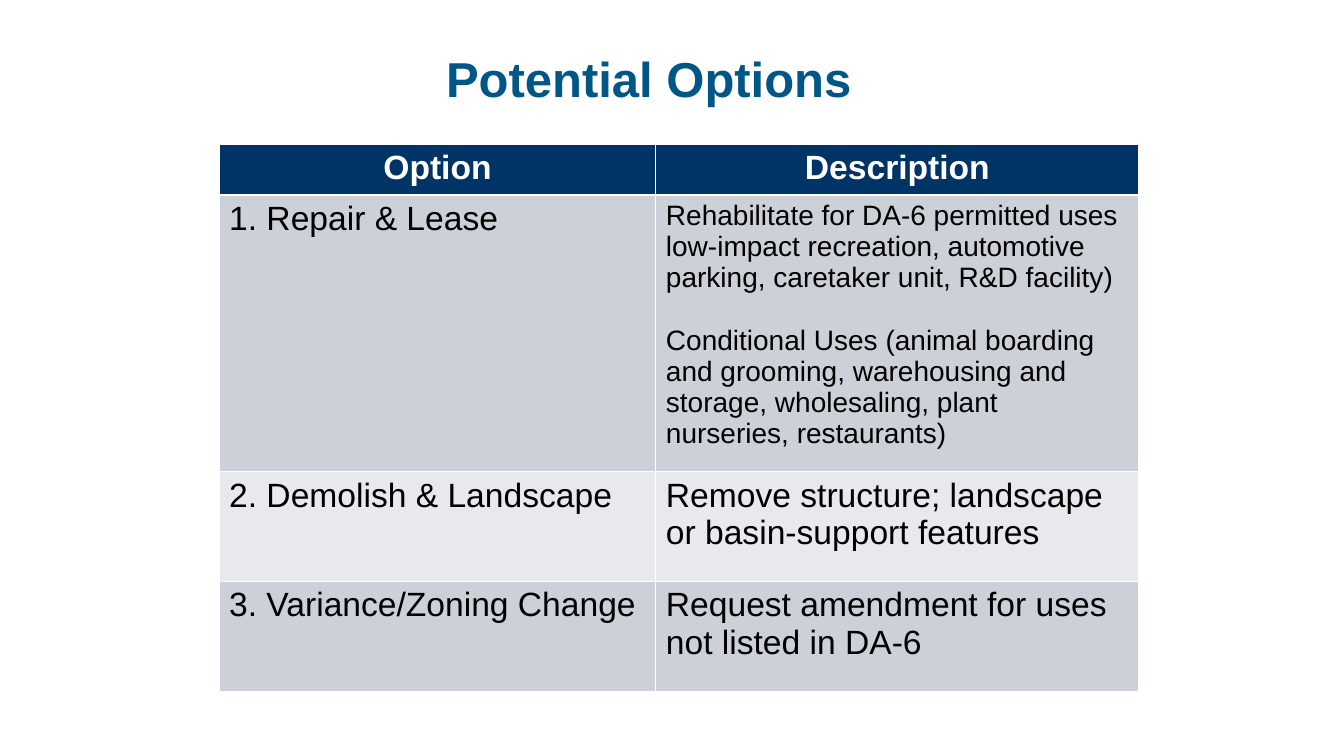
from lxml import etree
from pptx import Presentation
from pptx.dml.color import RGBColor
from pptx.enum.text import MSO_ANCHOR, PP_ALIGN
from pptx.oxml.ns import qn
from pptx.util import Pt

CENTER, LEFT = PP_ALIGN.CENTER, PP_ALIGN.LEFT
MIDDLE = MSO_ANCHOR.MIDDLE

TITLE = "Potential Options"
HEADER = ["Option", "Description"]
OPTIONS = [
    ("1. Repair & Lease", [
        "Rehabilitate for DA-6 permitted uses low-impact recreation, "
        "automotive parking, caretaker unit, R&D facility)",
        "Conditional Uses (animal boarding and grooming, warehousing and "
        "storage, wholesaling, plant nurseries, restaurants)",
    ]),
    ("2. Demolish & Landscape",
     ["Remove structure; landscape or basin-support features"]),
    ("3. Variance/Zoning Change",
     ["Request amendment for uses not listed in DA-6"]),
]

THEME = {
    "font": "Arial",
    "title": {"size": 35, "color": "005687", "bold": True},
    "header": {"size": 24, "color": "FFFFFF", "bold": True},
    "body": {"size": 24, "color": "000000", "bold": False},
    "detail": {"size": 20, "color": "000000", "bold": False},
    "header_fill": "003366",
    "bands": ["CCD1D9", "E7E9ED"],
    "border": "FFFFFF",
}

SLIDE_SIZE = (960, 540)
TITLE_BOX = (87.84, 13, 751.7, 90)
TABLE_LEFT, TABLE_TOP = 156.5, 103.2
COL_WIDTHS = [312, 345]
ROW_HEIGHTS = [34, 186, 78.5, 78.5]
PARAGRAPH_GAP = 22.3


def write(tf, paragraphs, style, align=LEFT, line_spacing=1.0):
    for i, text in enumerate(paragraphs):
        p = tf.paragraphs[0] if i == 0 else tf.add_paragraph()
        p.alignment, p.line_spacing = align, line_spacing
        if i:
            p.space_before = Pt(PARAGRAPH_GAP)
        r = p.add_run()
        r.text = text
        fmt = THEME[style]
        values = {"name": THEME["font"], "size": Pt(fmt["size"]), "bold": fmt["bold"]}
        for name, value in values.items():
            setattr(r.font, name, value)
        r.font.color.rgb = RGBColor.from_string(fmt["color"])


def style_cell(cell, color):
    """Fill the cell and give it thin borders on all four sides."""
    cell.fill.solid()
    cell.fill.fore_color.rgb = RGBColor.from_string(color)
    tc_pr = cell._tc.get_or_add_tcPr()
    for i, side in enumerate(("a:lnL", "a:lnR", "a:lnT", "a:lnB")):
        ln = etree.Element(qn(side), w=str(Pt(1)))
        fill = etree.SubElement(ln, qn("a:solidFill"))
        etree.SubElement(fill, qn("a:srgbClr"), val=THEME["border"])
        tc_pr.insert(i, ln)


def add_title(slide):
    tf = slide.shapes.add_textbox(*map(Pt, TITLE_BOX)).text_frame
    tf.word_wrap, tf.vertical_anchor = True, MIDDLE
    write(tf, [TITLE], "title", CENTER, 0.9)


def add_options_table(slide):
    table = slide.shapes.add_table(
        len(ROW_HEIGHTS), len(COL_WIDTHS), Pt(TABLE_LEFT), Pt(TABLE_TOP),
        Pt(sum(COL_WIDTHS)), Pt(sum(ROW_HEIGHTS))).table
    for col, width in zip(table.columns, COL_WIDTHS):
        col.width = Pt(width)
    for row, height in zip(table.rows, ROW_HEIGHTS):
        row.height = Pt(height)

    for c, text in enumerate(HEADER):
        cell = table.cell(0, c)
        style_cell(cell, THEME["header_fill"])
        write(cell.text_frame, [text], "header", CENTER)
    for r, (option, description) in enumerate(OPTIONS):
        for c, paragraphs in enumerate(([option], description)):
            cell = table.cell(r + 1, c)
            style_cell(cell, THEME["bands"][r % 2])
            style = "detail" if len(paragraphs) > 1 else "body"
            write(cell.text_frame, paragraphs, style)


def main():
    prs = Presentation()
    prs.slide_width, prs.slide_height = map(Pt, SLIDE_SIZE)
    slide = prs.slides.add_slide(prs.slide_layouts[6])
    add_title(slide)
    add_options_table(slide)
    prs.save("out.pptx")


if __name__ == "__main__":
    main()
